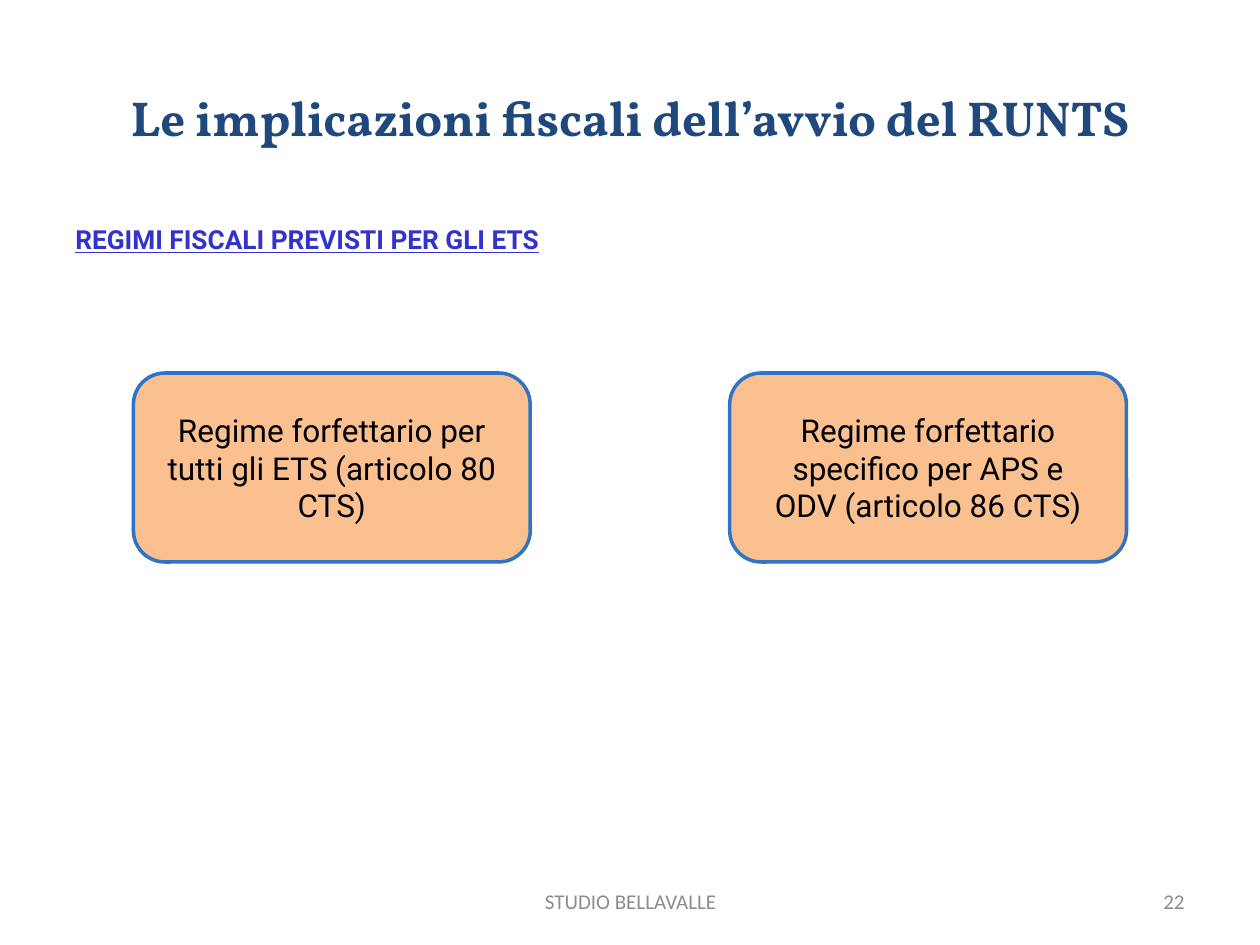
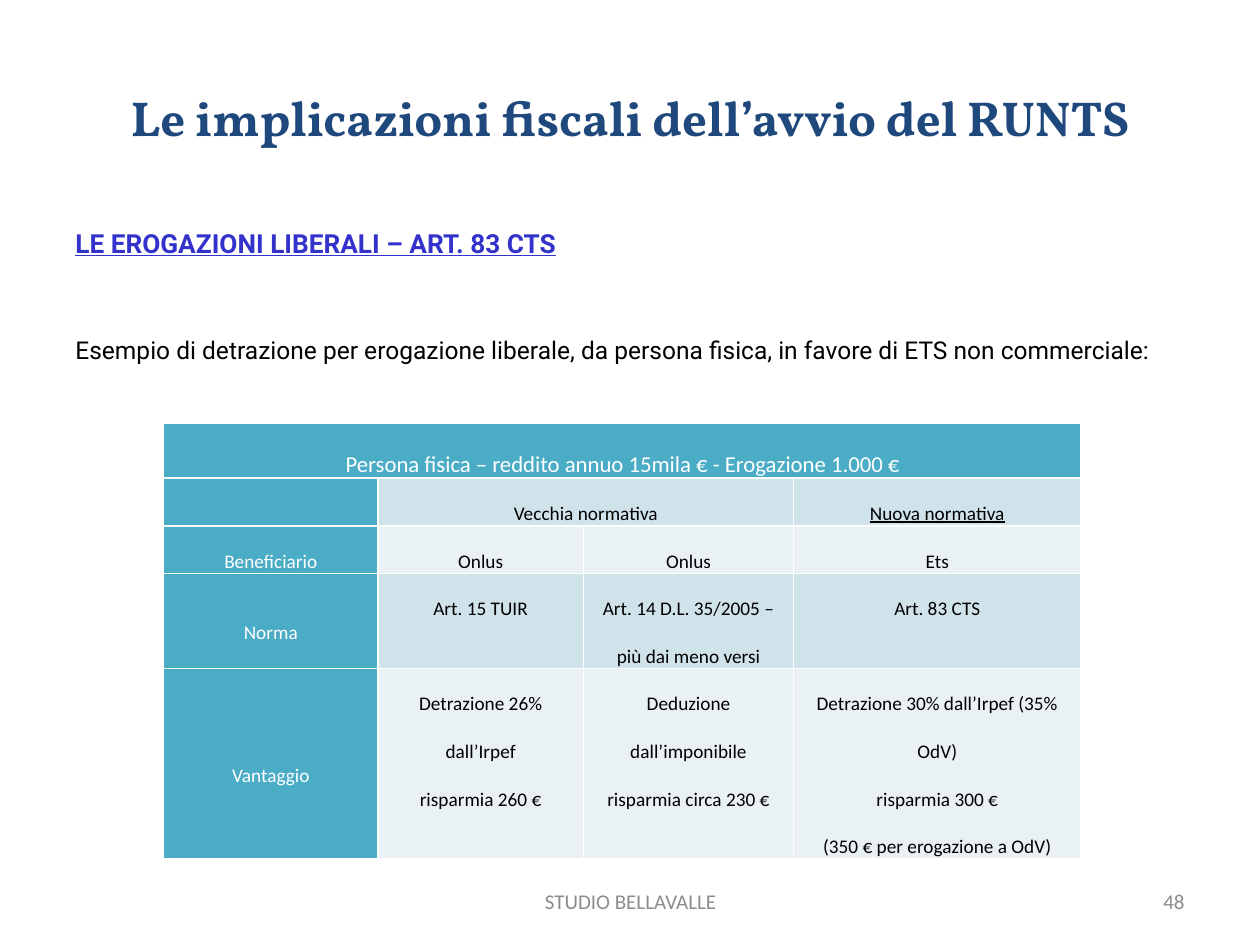
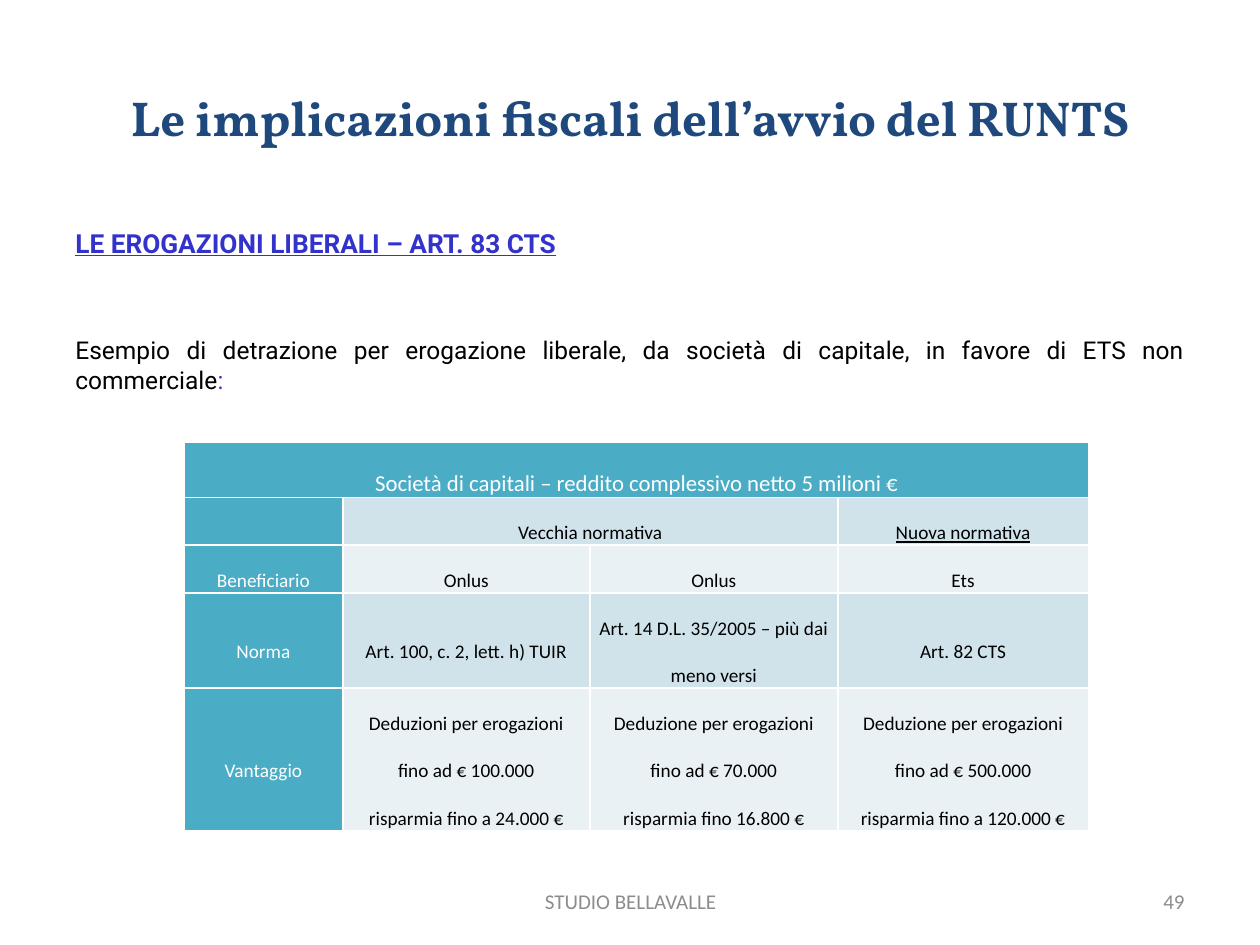
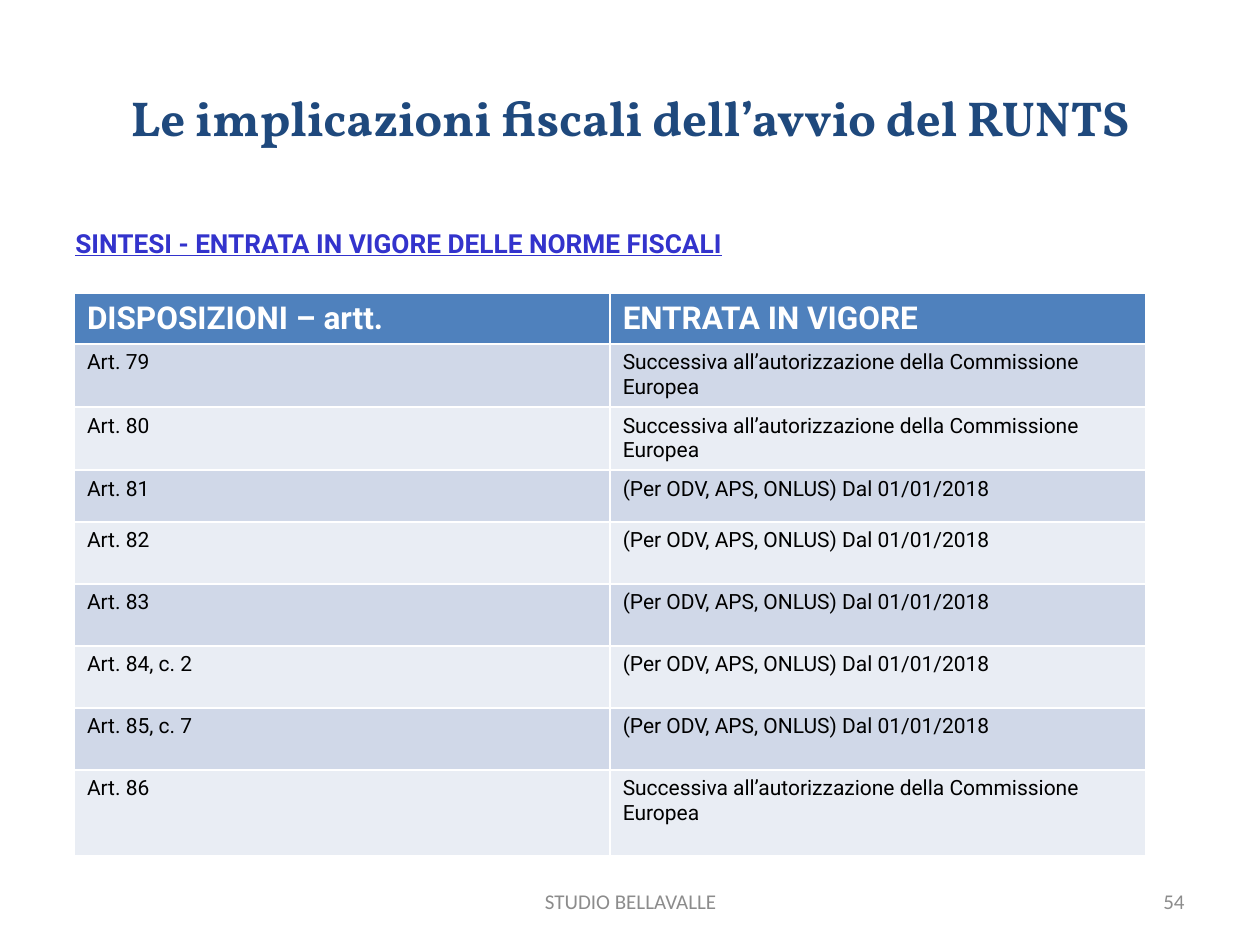
from pptx import Presentation
from pptx import util as u
from pptx.dml import color
from pptx.enum import shapes, text

TITLE = "Le implicazioni fiscali dell’avvio del RUNTS"
FOOTER = "STUDIO BELLAVALLE"
NAVY, VIOLET, GREY = "1F497D", "3333CC", "8C8C8C"
BLACK, WHITE = "000000", "FFFFFF"
PEACH, BOX_EDGE = "FAC090", "3172C4"
TEAL, TEAL_BANDS = "4BACC6", ("D0E3EA", "E9F1F5")
BLUE, BLUE_BANDS = "4F81BD", ("D0D8E8", "E9EDF4")
ALIGN, ANCHOR = text.PP_ALIGN, text.MSO_ANCHOR
DOUBLE_LINE = 0.96


def rgb(value):
    return color.RGBColor.from_string(value)


class Deck:
    def __init__(self):
        self.presentation = Presentation()
        self.presentation.slide_width = u.Cm(25.4)
        self.presentation.slide_height = u.Cm(19.05)
        self.slide = None

    def run(self, paragraph, words, size, ink, font="Roboto", bold=False, underline=False):
        run = paragraph.add_run()
        run.text = words
        run.font.name = font
        run.font.size = u.Pt(size)
        run.font.bold = bold
        run.font.underline = underline
        run.font.color.rgb = rgb(ink)

    def box(self, left, top, width, height, anchor=ANCHOR.TOP):
        frame = self.slide.shapes.add_textbox(*map(u.Cm, (left, top, width, height))).text_frame
        frame.word_wrap = True
        frame.vertical_anchor = anchor
        return frame

    def page(self, number):
        self.slide = self.presentation.slides.add_slide(self.presentation.slide_layouts[5])
        title = self.slide.shapes.title
        title.left, title.top, title.width, title.height = map(u.Cm, (1.27, 0.76, 22.86, 3.18))
        title.text_frame.vertical_anchor = ANCHOR.MIDDLE
        paragraph = title.text_frame.paragraphs[0]
        paragraph.alignment = ALIGN.CENTER
        self.run(paragraph, TITLE, 28, NAVY, "Vollkorn", bold=True)
        for words, left, width, alignment in (
            (FOOTER, 8.69, 8.05, ALIGN.CENTER),
            (str(number), 18.21, 5.92, ALIGN.RIGHT),
        ):
            paragraph = self.box(left, 17.65, width, 1.02, ANCHOR.MIDDLE).paragraphs[0]
            paragraph.alignment = alignment
            self.run(paragraph, words, 12, GREY, "Calibri")

    def body(self, heading, example=(), spacing=1.0):
        frame = self.box(1.27, 4.45, 22.86, 12.57)
        paragraph = frame.paragraphs[0]
        paragraph.alignment = ALIGN.JUSTIFY
        paragraph.line_spacing = spacing
        paragraph.space_before = u.Pt(3)
        self.run(paragraph, heading, 15, VIOLET, bold=True, underline=True)
        if example:
            paragraph = frame.add_paragraph()
            paragraph.alignment = ALIGN.JUSTIFY
            paragraph.space_before = u.Pt(44)
            for words, ink in example:
                self.run(paragraph, words, 14, ink)

    def rounded_box(self, left, words):
        shape = self.slide.shapes.add_shape(
            shapes.MSO_SHAPE.ROUNDED_RECTANGLE, *map(u.Cm, (left, 7.52, 8, 3.81)))
        shape.shadow.inherit = False
        shape.fill.solid()
        shape.fill.fore_color.rgb = rgb(PEACH)
        shape.line.color.rgb = rgb(BOX_EDGE)
        shape.line.width = u.Pt(2)
        frame = shape.text_frame
        frame.word_wrap = True
        frame.margin_left = frame.margin_right = u.Cm(0.48)
        frame.vertical_anchor = ANCHOR.MIDDLE
        paragraph = frame.paragraphs[0]
        paragraph.alignment = ALIGN.CENTER
        self.run(paragraph, words, 18, BLACK)

    def table(self, left, top, widths, heights):
        table = self.slide.shapes.add_table(
            len(heights), len(widths), *map(u.Cm, (left, top, sum(widths), sum(heights)))).table
        for column, width in zip(table.columns, widths):
            column.width = u.Cm(width)
        for row, height in zip(table.rows, heights):
            row.height = u.Cm(height)
        return table

    def fill(self, cell, value):
        cell.fill.solid()
        cell.fill.fore_color.rgb = rgb(value)

    def comparison(self, left, top, widths, line_counts, rows, middle_rows=()):
        heights = [1.11] + [DOUBLE_LINE * count for count in line_counts]
        table = self.table(left, top, widths, heights)
        table.cell(0, 0).merge(table.cell(0, 3))
        table.cell(1, 1).merge(table.cell(1, 2))
        for i, row in enumerate(rows):
            for j, words in enumerate(row):
                cell = table.cell(i, j)
                label = i == 0 or j == 0
                self.fill(cell, TEAL if label else TEAL_BANDS[(i - 1) % 2])
                cell.margin_left = cell.margin_right = u.Cm(0.18)
                cell.margin_top = cell.margin_bottom = 0
                centred = label or i in middle_rows
                cell.vertical_anchor = ANCHOR.MIDDLE if centred else ANCHOR.TOP
                for k, line in enumerate(words.split("\n") if words else ()):
                    frame = cell.text_frame
                    paragraph = frame.add_paragraph() if k else frame.paragraphs[0]
                    paragraph.alignment = ALIGN.CENTER
                    paragraph.line_spacing = 2.0
                    self.run(paragraph, line, 11 if i else 13, WHITE if label else BLACK,
                             "Calibri", underline=(i, j) == (1, 3))

    def schedule(self, left, top, widths, heights, rows):
        table = self.table(left, top, widths, heights)
        for i, row in enumerate(rows):
            for j, words in enumerate(row):
                cell = table.cell(i, j)
                self.fill(cell, BLUE_BANDS[(i - 1) % 2] if i else BLUE)
                self.run(cell.text_frame.paragraphs[0], words, 12 if i else 18,
                         BLACK if i else WHITE, bold=i == 0)


def comparison_rows(caption, norms, benefits):
    return [
        (caption, "", "", ""),
        ("", "Vecchia normativa", "", "Nuova normativa"),
        ("Beneficiario", "Onlus", "Onlus", "Ets"),
        ("Norma", *norms),
        ("Vantaggio", *benefits),
    ]


def main():
    deck = Deck()
    donations = "LE EROGAZIONI LIBERALI – ART. 83 CTS"
    decree = "Art. 14 D.L. 35/2005 – più dai meno versi"

    deck.page(22)
    deck.body("REGIMI FISCALI PREVISTI PER GLI ETS", spacing=0.9)
    deck.rounded_box(2.69, "Regime forfettario per tutti gli ETS (articolo 80 CTS)")
    deck.rounded_box(14.71, "Regime forfettario specifico per APS e ODV (articolo 86 CTS)")

    deck.page(48)
    deck.body(donations, [(
        "Esempio di detrazione per erogazione liberale, da persona fisica, "
        "in favore di ETS non commerciale:", BLACK)])
    deck.comparison(3.3, 8.53, (4.32, 4.14, 4.24, 5.79), (1, 1, 2, 4), comparison_rows(
        "Persona fisica – reddito annuo 15mila € - Erogazione 1.000 €",
        ("Art. 15 TUIR", decree, "Art. 83 CTS"),
        ("Detrazione 26% dall’Irpef\nrisparmia 260 €",
         "Deduzione dall’imponibile\nrisparmia circa 230 €",
         "Detrazione 30% dall’Irpef (35% OdV)\nrisparmia 300 €\n(350 € per erogazione a OdV)")))

    deck.page(49)
    deck.body(donations, [(
        "Esempio di detrazione per erogazione liberale, da società di capitale, "
        "in favore di ETS non commerciale", BLACK), (":", VIOLET)])
    deck.comparison(3.71, 8.92, (3.2, 4.98, 5, 5.05), (1, 1, 2, 3), comparison_rows(
        "Società di capitali – reddito complessivo netto 5 milioni €",
        ("Art. 100, c. 2, lett. h) TUIR", decree, "Art. 82 CTS"),
        ("Deduzioni per erogazioni fino ad € 100.000\nrisparmia fino a 24.000 €",
         "Deduzione per erogazioni fino ad € 70.000\nrisparmia fino 16.800 €",
         "Deduzione per erogazioni fino ad € 500.000\nrisparmia fino a 120.000 €")),
        middle_rows=(3,))

    deck.page(54)
    deck.body("SINTESI - ENTRATA IN VIGORE DELLE NORME FISCALI")
    approval = "Successiva all’autorizzazione della Commissione Europea"
    dated = "(Per ODV, APS, ONLUS) Dal 01/01/2018"
    dated_articles = ("Art. 81", "Art. 82", "Art. 83", "Art. 84, c. 2", "Art. 85, c. 7")
    deck.schedule(1.5, 5.92, (10.8, 10.8), (1.01, 1.25, 1.25, 1.04, *[1.25] * 4, 1.73), [
        ("DISPOSIZIONI – artt.", "ENTRATA IN VIGORE"),
        ("Art. 79", approval),
        ("Art. 80", approval),
        *((article, dated) for article in dated_articles),
        ("Art. 86", approval),
    ])

    deck.presentation.save("out.pptx")


if __name__ == "__main__":
    main()
